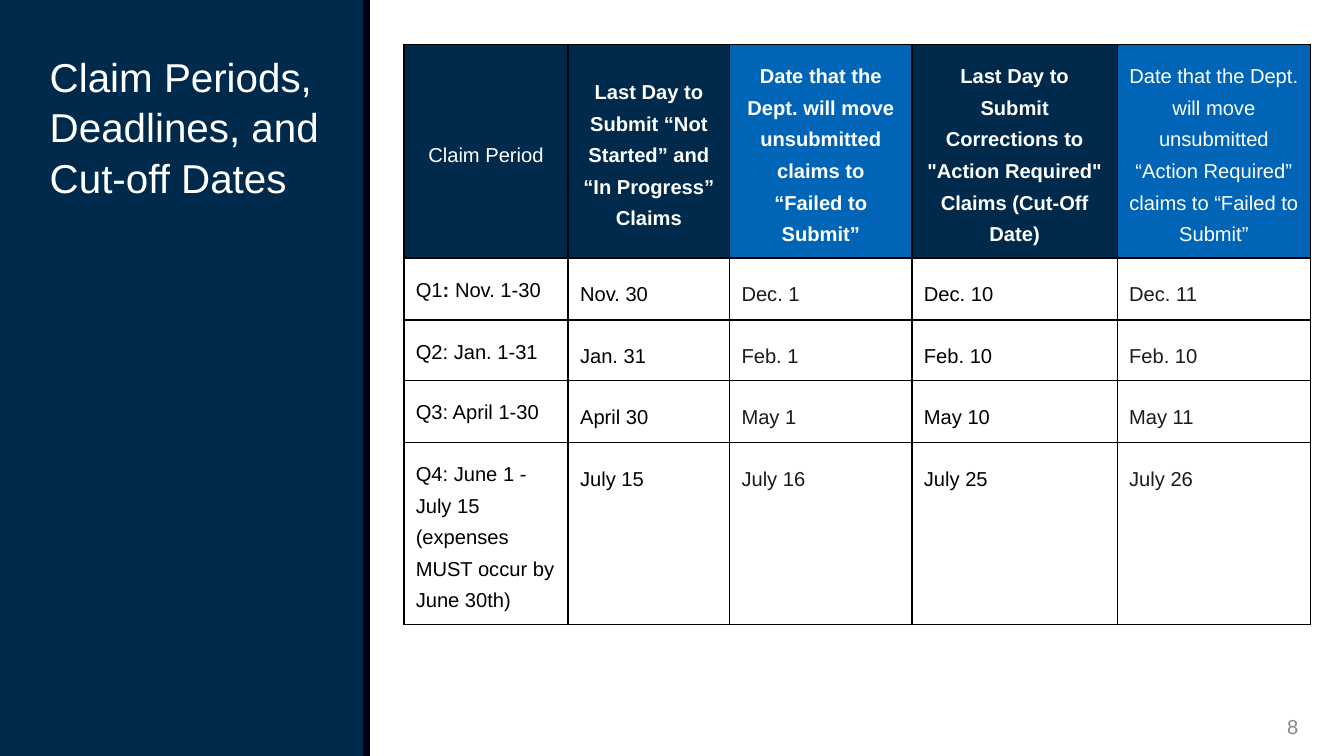
import pptx
import pptx.util
import pptx.dml.color
import pptx.enum.shapes
import pptx.enum.text
import pptx.oxml
import pptx.oxml.ns
from dataclasses import dataclass

Cm = pptx.util.Cm
Pt = pptx.util.Pt
Align = pptx.enum.text.PP_ALIGN
Anchor = pptx.enum.text.MSO_ANCHOR


@dataclass(frozen=True)
class Theme:
    font: str = "Arial"
    navy: str = "002A4B"
    blue: str = "0065B7"
    white: str = "FFFFFF"
    black: str = "000000"
    ink: str = "1B1B1B"
    gray: str = "888888"
    shade: str = "000014"
    head: int = 24
    body: int = 12


THEME = Theme()

WIDTHS = [3.45, 3.39, 3.83, 4.31, 4.06]
HEIGHTS = [4.49, 1.3, 1.27, 1.3, 3.83]
# Each column head: text, fill, bold
HEADS = [
    ("Claim Period", THEME.navy, False),
    ("Last Day to Submit “Not Started” and “In Progress” Claims", THEME.navy, True),
    ("Date that the Dept. will move unsubmitted claims to “Failed to Submit”", THEME.blue, True),
    ('Last Day to Submit Corrections to "Action Required" Claims (Cut-Off Date)', THEME.navy, True),
    ("Date that the Dept. will move unsubmitted “Action Required” claims to “Failed to Submit”",
     THEME.blue, False),
]
ROWS = [
    ("Q1: Nov. 1-30", "Nov. 30", "Dec. 1", "Dec. 10", "Dec. 11"),
    ("Q2: Jan. 1-31", "Jan. 31", "Feb. 1", "Feb. 10", "Feb. 10"),
    ("Q3: April 1-30", "April 30", "May 1", "May 10", "May 11"),
    ("Q4: June 1 - July 15 (expenses MUST occur by June 30th)",
     "July 15", "July 16", "July 25", "July 26"),
]
INKS = [THEME.black, THEME.black, THEME.ink, THEME.black, THEME.ink]


def rgb(code):
    return pptx.dml.color.RGBColor.from_string(code)


def style(para, size, color, align=Align.LEFT, space=1.0, bold=False):
    para.alignment = align
    para.line_spacing = space
    font = para.font
    font.name, font.size, font.bold = THEME.font, Pt(size), bold
    font.color.rgb = rgb(color)


def add_block(slide, left, width):
    """Full-height rectangle without outline."""
    block = slide.shapes.add_shape(pptx.enum.shapes.MSO_SHAPE.RECTANGLE,
                                   Cm(left), 0, Cm(width), Cm(15.88))
    block.shadow.inherit = False
    block.line.fill.background()
    return block


def add_shade(slide, left, width):
    """Soft shadow that darkens towards the panel."""
    fill = add_block(slide, left, width).fill
    fill.gradient()
    fill.gradient_angle = 0
    for stop, alpha in zip(fill.gradient_stops, (0, 20000)):
        stop.color.rgb = rgb(THEME.shade)
        tone = stop.color._xFill
        tone.append(pptx.oxml.parse_xml(
            f'<a:alpha {pptx.oxml.ns.nsdecls("a")} val="{alpha}"/>'))


def add_panel(slide, left, width):
    fill = add_block(slide, left, width).fill
    fill.solid()
    fill.fore_color.rgb = rgb(THEME.white)


def set_title(slide, text):
    title = slide.shapes.title
    title.left, title.top, title.width, title.height = Cm(0.79), Cm(0.91), Cm(6.32), Cm(14.07)
    frame = title.text_frame
    frame.text = text
    frame.word_wrap = True
    frame.auto_size = pptx.enum.text.MSO_AUTO_SIZE.NONE
    frame.vertical_anchor = Anchor.TOP
    style(frame.paragraphs[0], THEME.head, THEME.white, space=1.05)


def set_edges(cell):
    """Thin black border on all four sides, placed before the fill."""
    props = cell._tc.get_or_add_tcPr()
    for spot, side in enumerate(("lnL", "lnR", "lnT", "lnB")):
        props.insert(spot, pptx.oxml.parse_xml(
            f'<a:{side} {pptx.oxml.ns.nsdecls("a")} w="12700"><a:solidFill>'
            f'<a:srgbClr val="{THEME.black}"/></a:solidFill></a:{side}>'))


def set_cell(cell, text, fill):
    cell.text = text
    cell.margin_left = cell.margin_right = Cm(0.25)
    cell.margin_top = cell.margin_bottom = Cm(0.25)
    cell.fill.solid()
    cell.fill.fore_color.rgb = rgb(fill)
    set_edges(cell)
    return cell.text_frame.paragraphs[0]


def add_dates(slide):
    frame = slide.shapes.add_table(len(ROWS) + 1, len(HEADS), Cm(8.48), Cm(0.93),
                                   Cm(sum(WIDTHS)), Cm(sum(HEIGHTS)))
    table = frame.table
    table.horz_banding = False
    table.first_row = False
    for column, width in zip(table.columns, WIDTHS):
        column.width = Cm(width)
    for row, height in zip(table.rows, HEIGHTS):
        row.height = Cm(height)

    # Column heads
    for col, (text, fill, bold) in enumerate(HEADS):
        cell = table.cell(0, col)
        para = set_cell(cell, text, fill)
        cell.vertical_anchor = Anchor.MIDDLE
        style(para, THEME.body, THEME.white, Align.CENTER, 1.4, bold)

    # Quarters
    for row, texts in enumerate(ROWS, 1):
        for col, (text, ink) in enumerate(zip(texts, INKS)):
            para = set_cell(table.cell(row, col), text, THEME.white)
            style(para, THEME.body, ink, space=1.6 if col else 1.4)

    # Bold colon in the first quarter
    para = table.cell(1, 0).text_frame.paragraphs[0]
    name, dates = ROWS[0][0].split(": ")
    para.runs[0].text = name
    colon = para.add_run()
    colon.text = ": "
    colon.font.bold = True
    colon.font.color.rgb = rgb(THEME.ink)
    para.add_run().text = dates


def add_number(slide, text):
    box = slide.shapes.add_textbox(Cm(25.45), Cm(14.96), Cm(2.06), Cm(0.58))
    frame = box.text_frame
    frame.word_wrap = True
    frame.vertical_anchor = Anchor.MIDDLE
    frame.text = text
    style(frame.paragraphs[0], THEME.body, THEME.gray, Align.RIGHT)


def main():
    deck = pptx.Presentation()
    deck.slide_width, deck.slide_height = Cm(28.22), Cm(15.88)
    slide = deck.slides.add_slide(deck.slide_layouts[5])

    # Navy side and white panel
    slide.background.fill.solid()
    slide.background.fill.fore_color.rgb = rgb(THEME.navy)
    add_shade(slide, 7.62, 0.36)
    add_panel(slide, 7.77, 20.45)

    # Content
    set_title(slide, "Claim Periods, Deadlines, and Cut-off Dates")
    add_dates(slide)
    add_number(slide, "8")
    deck.save("out.pptx")


if __name__ == "__main__":
    main()
